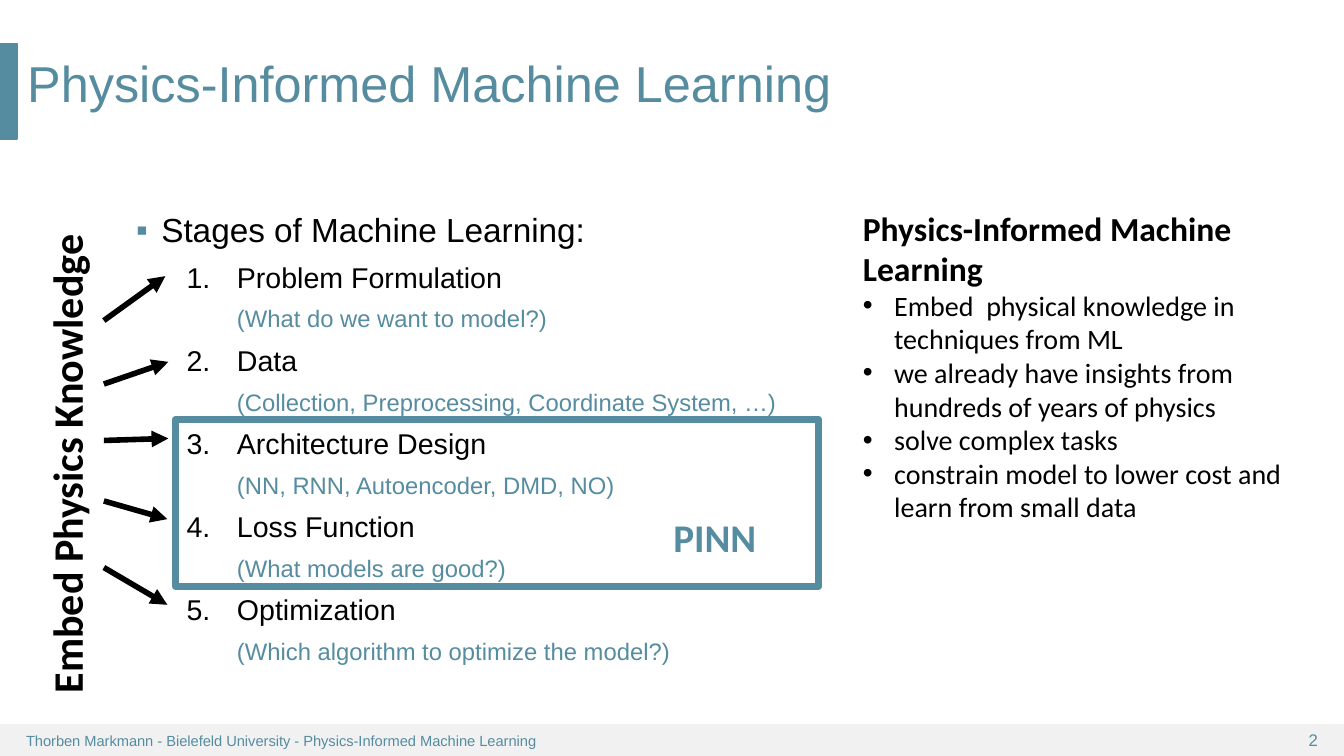
from lxml import etree
from pptx import Presentation
from pptx.dml.color import RGBColor
from pptx.enum.shapes import MSO_CONNECTOR, MSO_SHAPE
from pptx.enum.text import MSO_ANCHOR, MSO_AUTO_SIZE, PP_ALIGN
from pptx.oxml.ns import qn
from pptx.util import Inches, Pt

RECTANGLE = MSO_SHAPE.RECTANGLE
STRAIGHT = MSO_CONNECTOR.STRAIGHT
LEFT, RIGHT = PP_ALIGN.LEFT, PP_ALIGN.RIGHT
TOP, MIDDLE = MSO_ANCHOR.TOP, MSO_ANCHOR.MIDDLE
NO_AUTOFIT = MSO_AUTO_SIZE.NONE

COLORS = {"teal": "558CA0", "gray": "F1F1F1", "black": "000000"}

STAGES = [
    ("Problem Formulation", "(What do we want to model?)"),
    ("Data", "(Collection, Preprocessing, Coordinate System, …)"),
    ("Architecture Design", "(NN, RNN, Autoencoder, DMD, NO)"),
    ("Loss Function", "(What models are good?)"),
    ("Optimization", "(Which algorithm to optimize the model?)"),
]
BENEFITS = [
    "Embed  physical knowledge in techniques from ML",
    "we already have insights from hundreds of years of physics",
    "solve complex tasks",
    "constrain model to lower cost and learn from small data",
]
# Start height, end x and end height of each arrow
ARROWS = [
    (3.18, 1.64, 2.74),
    (3.81, 1.67, 3.59),
    (4.37, 1.67, 4.35),
    (4.97, 1.66, 5.15),
    (5.63, 1.66, 6),
]


def rgb(color):
    return RGBColor.from_string(COLORS[color])


def place(shape, left, top, width, height):
    shape.left, shape.top = Inches(left), Inches(top)
    shape.width, shape.height = Inches(width), Inches(height)


def style(paragraph, size, color="black", font="Arial", bold=False, align=LEFT):
    paragraph.alignment = align
    paragraph.font.size = Pt(size)
    paragraph.font.name = font
    paragraph.font.bold = bold
    paragraph.font.color.rgb = rgb(color)


def set_bullet(paragraph, margin, indent, tag, color="black", **attributes):
    props = paragraph._p.get_or_add_pPr()
    props.set("marL", str(Inches(margin)))
    props.set("indent", str(Inches(indent)))
    if tag != "a:buNone":
        bullet_color = etree.SubElement(props, qn("a:buClr"))
        etree.SubElement(bullet_color, qn("a:srgbClr"), val=COLORS[color])
        etree.SubElement(props, qn("a:buFont"), typeface="Arial")
    etree.SubElement(props, qn(tag), **attributes)


def next_paragraph(frame, text):
    paragraph = frame.add_paragraph() if frame.text else frame.paragraphs[0]
    paragraph.text = text
    return paragraph


def add_rectangle(slide, box, line, line_width, fill=None):
    rectangle = slide.shapes.add_shape(RECTANGLE, *map(Inches, box))
    rectangle.shadow.inherit = False
    if fill:
        rectangle.fill.solid()
        rectangle.fill.fore_color.rgb = rgb(fill)
    else:
        rectangle.fill.background()
    rectangle.line.color.rgb = rgb(line)
    rectangle.line.width = Pt(line_width)


def add_text(slide, box, text, size, anchor=TOP, rotation=0, **look):
    label = slide.shapes.add_textbox(*map(Inches, box))
    label.rotation = rotation
    frame = label.text_frame
    frame.word_wrap = True
    frame.vertical_anchor = anchor
    style(next_paragraph(frame, text), size, **look)
    return frame


def add_arrow(slide, start_y, end_x, end_y):
    ends = map(Inches, (1.03, start_y, end_x, end_y))
    arrow = slide.shapes.add_connector(STRAIGHT, *ends)
    arrow.line.color.rgb = rgb("black")
    arrow.line.width = Pt(4)
    etree.SubElement(arrow.line._get_or_add_ln(), qn("a:tailEnd"), type="triangle")
    etree.SubElement(arrow._element.spPr, qn("a:effectLst"))


def fill_title(title):
    place(title, 0.17, 0.43, 10.74, 0.86)
    frame = title.text_frame
    frame.auto_size = NO_AUTOFIT
    frame.vertical_anchor = MIDDLE
    heading = next_paragraph(frame, "Physics-Informed Machine Learning")
    heading.line_spacing = 0.9
    style(heading, 36, "teal")


def fill_stages(body):
    place(body, 1.25, 1.99, 6.61, 4.76)
    frame = body.text_frame
    frame.auto_size = NO_AUTOFIT
    intro = next_paragraph(frame, "Stages of Machine Learning:")
    set_bullet(intro, 0.25, -0.25, "a:buChar", "teal", char="▪")
    style(intro, 23.8)
    for number, (stage, detail) in enumerate(STAGES, 1):
        name = next_paragraph(frame, stage)
        name.level = 1
        set_bullet(name, 1, -0.5, "a:buAutoNum", type="arabicPeriod", startAt=str(number))
        style(name, 20.4)
        note = next_paragraph(frame, detail)
        note.level = 2
        set_bullet(note, 1, 0, "a:buNone")
        style(note, 17, "teal")
    for paragraph in frame.paragraphs:
        paragraph.line_spacing = 1.1
        paragraph.space_before = Pt(0 if paragraph.level == 0 else 5)


def add_benefits(slide):
    frame = add_text(slide, (8.46, 2.01, 4.51, 3.6),
                     "Physics-Informed Machine Learning", 24, font="Calibri", bold=True)
    for benefit in BENEFITS:
        item = next_paragraph(frame, benefit)
        set_bullet(item, 0.31, -0.31, "a:buChar", char="•")
        style(item, 20, font="Calibri")


def main():
    deck = Presentation()
    deck.slide_width, deck.slide_height = Inches(13.33), Inches(7.5)
    slide = deck.slides.add_slide(deck.slide_layouts[1])

    # Footer band and title accent
    add_rectangle(slide, (0, 7.19, 13.33, 0.31), "gray", 1, fill="gray")
    add_rectangle(slide, (0, 0.43, 0.17, 0.95), "teal", 1, fill="teal")

    # Title and stages
    fill_title(slide.shapes.title)
    fill_stages(slide.placeholders[1])

    # Footer
    add_text(slide, (12.31, 7.19, 0.86, 0.29), "2", 12, MIDDLE, color="teal", align=RIGHT)
    add_text(slide, (0.16, 7.19, 7.63, 0.31),
             "Thorben Markmann - Bielefeld University - Physics-Informed Machine Learning",
             10.5, MIDDLE, color="teal")

    # Physics knowledge feeding every stage
    add_text(slide, (-1.72, 4.29, 4.76, 0.61), "Embed Physics Knowledge", 30,
             rotation=270, font="Calibri", bold=True)
    for arrow in ARROWS:
        add_arrow(slide, *arrow)

    # Benefits
    add_benefits(slide)

    # Stages covered by PINN
    add_rectangle(slide, (1.74, 4.16, 6.38, 1.66), "teal", 5)
    add_text(slide, (6.58, 5.04, 1.55, 0.57), "PINN", 28,
             color="teal", font="Calibri", bold=True)

    deck.save("out.pptx")


if __name__ == "__main__":
    main()
